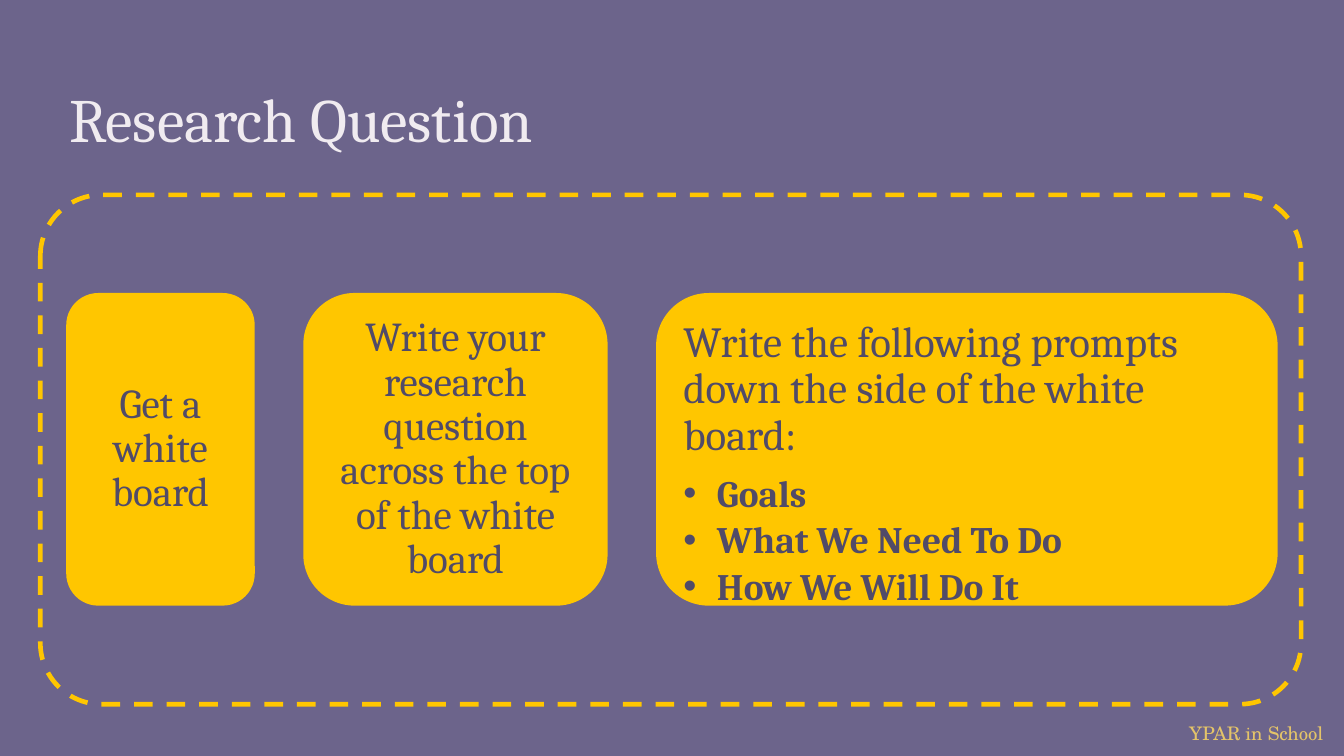
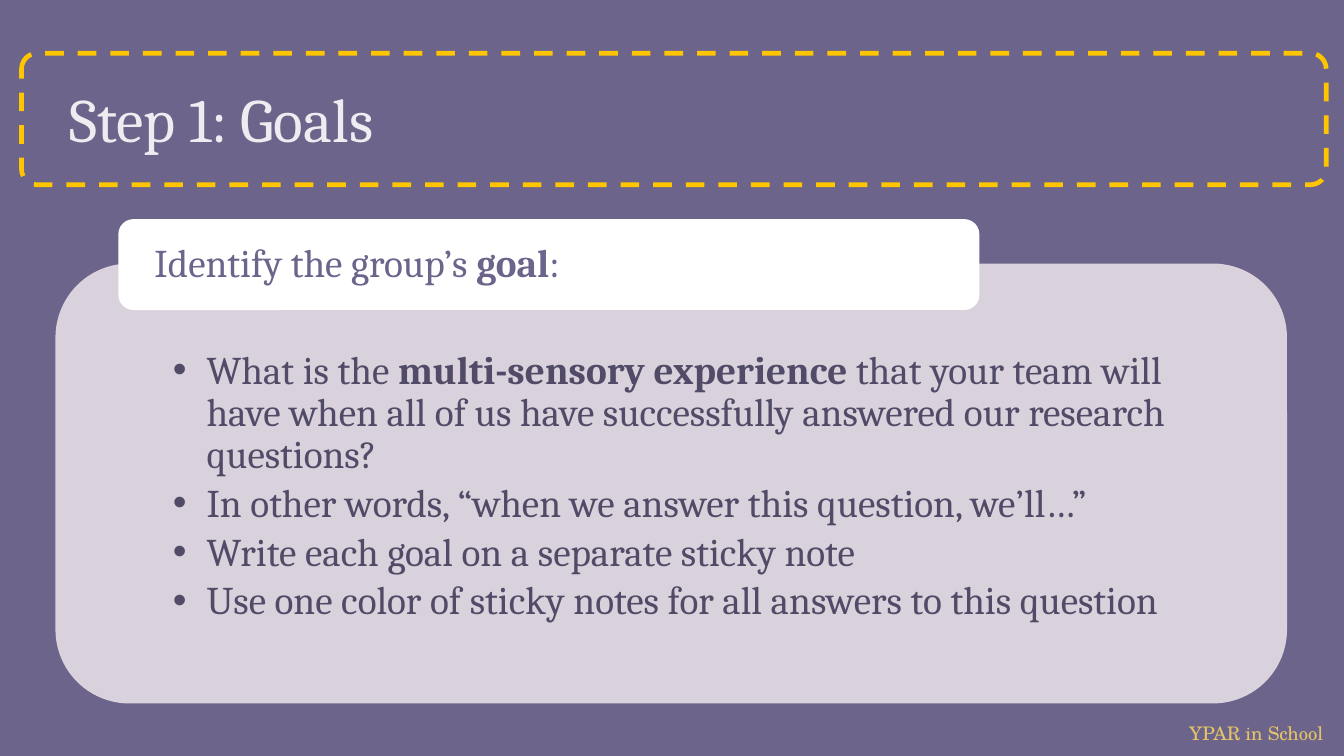
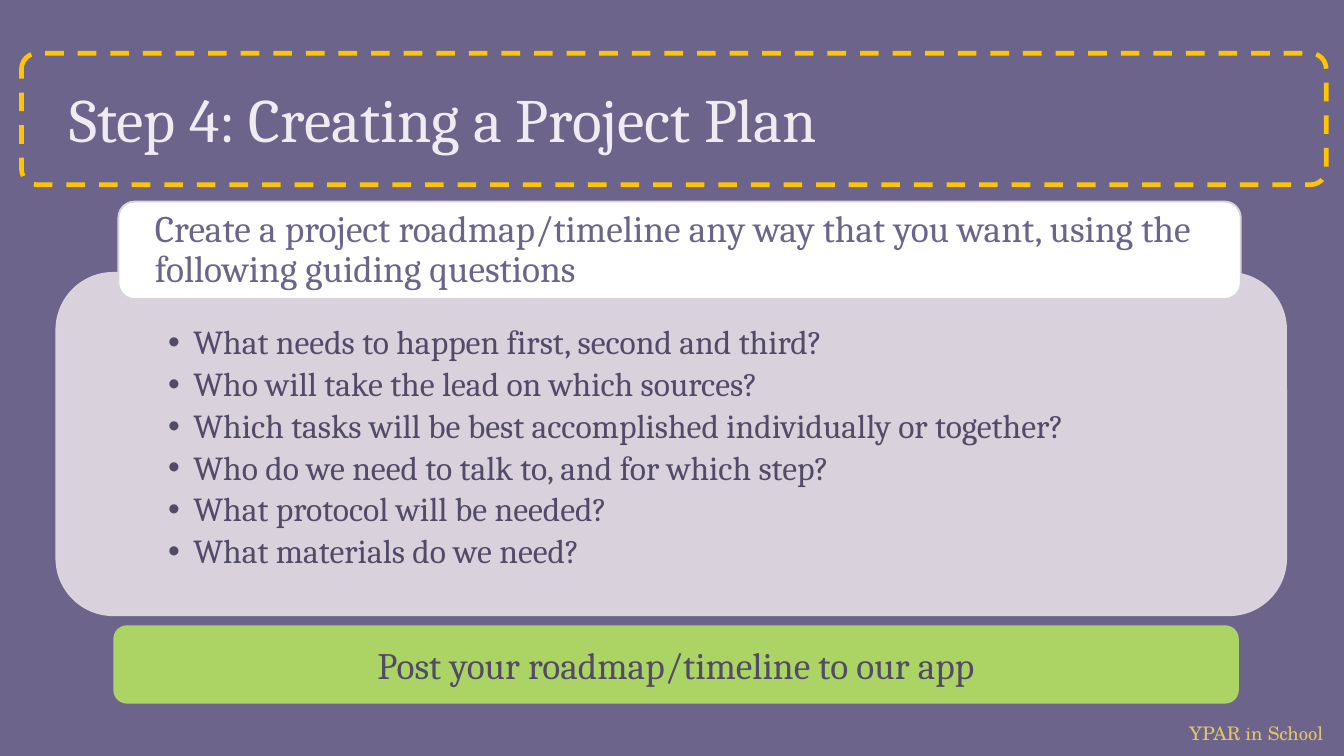
from dataclasses import dataclass

from lxml.etree import SubElement
from pptx import Presentation
from pptx.dml.color import RGBColor
from pptx.enum.dml import MSO_LINE
from pptx.enum.shapes import MSO_SHAPE
from pptx.enum.text import MSO_ANCHOR, PP_ALIGN
from pptx.oxml.ns import qn
from pptx.slide import Slide
from pptx.text.text import TextFrame
from pptx.util import Pt

PURPLE = RGBColor(0x6C, 0x64, 0x8B)
DARK = RGBColor(0x51, 0x4B, 0x68)
PALE = RGBColor(0xF0, 0xEB, 0xF0)
LILAC = RGBColor(0xE5, 0xDF, 0xE5)
LILAC_LINE = RGBColor(0xDA, 0xD3, 0xDD)
YELLOW = RGBColor(0xFF, 0xC6, 0x00)
GOLD = RGBColor(0xE4, 0xC4, 0x69)
GREEN = RGBColor(0xAC, 0xD4, 0x65)
WHITE = RGBColor(0xFF, 0xFF, 0xFF)

BODY_FONT = "Cambria"
FOOTER_FONT = "TeX Gyre Schola"
LINE_SPACING = 0.9
PARAGRAPH_GAP = 0.37
BULLET_GAP = 0.16
BOLD_MARK = "**"


@dataclass(frozen=True)
class Area:
    left: float
    top: float
    width: float
    height: float


@dataclass(frozen=True)
class Line:
    text: str
    size: float
    color: RGBColor = DARK
    indent: float = 0
    font: str = BODY_FONT


@dataclass(frozen=True)
class TextStyle:
    align: PP_ALIGN = PP_ALIGN.LEFT
    anchor: MSO_ANCHOR = MSO_ANCHOR.MIDDLE
    insets: tuple[float, float, float, float] = (7.2, 3.6, 7.2, 3.6)
    spacing: float = LINE_SPACING


@dataclass(frozen=True)
class Box:
    area: Area
    fill: RGBColor | None = None
    line: RGBColor | None = None
    line_width: float = 1
    dashed: bool = False
    corner: float = 0.16667
    opacity: int = 100


@dataclass(frozen=True)
class Card:
    width: float
    lines: list[Line]
    style: TextStyle


TITLE_AREA = Area(30, 36, 659, 54)
TITLE_STYLE = TextStyle(anchor=MSO_ANCHOR.BOTTOM, insets=(7.2,) * 4, spacing=1)
FOOTER_AREA = Area(630, 383, 90, 19.5)
FOOTER_STYLE = TextStyle(anchor=MSO_ANCHOR.TOP, insets=(7.2, 3.6, 0, 3.6), spacing=1)
TAB_STYLE = TextStyle(insets=(17, 0, 17, 0))
CARD_STYLE = TextStyle(align=PP_ALIGN.CENTER, insets=(6.5,) * 4)
PROMPT_STYLE = TextStyle(anchor=MSO_ANCHOR.TOP, insets=(6,) * 4)
BANNER_STYLE = TextStyle(align=PP_ALIGN.CENTER, spacing=1)

STEP_FRAME = Area(11.5, 28.5, 699, 70.5)
CARDS_FRAME = Area(21.6, 104.4, 675.4, 272.9)
CARD_LEFT, CARD_TOP, CARD_HEIGHT, CARD_GAP = 36, 157.5, 166.5, 27


def bullets(texts: list[str], size: float, indent: float) -> list[Line]:
    return [Line(text, size, indent=indent) for text in texts]


def write(tf: TextFrame, lines: list[Line], style: TextStyle) -> None:
    tf.word_wrap = True
    tf.vertical_anchor = style.anchor
    tf.margin_left, tf.margin_top, tf.margin_right, tf.margin_bottom = map(Pt, style.insets)
    for i, line in enumerate(lines):
        p = tf.add_paragraph() if i else tf.paragraphs[0]
        p.alignment = style.align
        p.line_spacing = style.spacing
        if len(lines) > 1:
            gap = BULLET_GAP if line.indent else PARAGRAPH_GAP
            p.space_after = Pt(round(line.size * gap, 1))
        if line.indent:
            pPr = p._p.get_or_add_pPr()
            pPr.set("marL", str(Pt(line.indent)))
            pPr.set("indent", str(-Pt(line.indent)))
            SubElement(pPr, qn("a:buFont"), typeface="Arial")
            SubElement(pPr, qn("a:buChar"), char="•")
        for k, part in enumerate(line.text.split(BOLD_MARK)):
            if part:
                r = p.add_run()
                r.text = part
                r.font.name = line.font
                r.font.size = Pt(line.size)
                r.font.bold = k % 2 == 1
                r.font.color.rgb = line.color


def bounds(area: Area) -> tuple[Pt, Pt, Pt, Pt]:
    return Pt(area.left), Pt(area.top), Pt(area.width), Pt(area.height)


def add_text(s: Slide, area: Area, line: Line, style: TextStyle) -> None:
    write(s.shapes.add_textbox(*bounds(area)).text_frame, [line], style)


def add_box(s: Slide, box: Box, lines: list[Line], style: TextStyle = TextStyle()) -> None:
    sp = s.shapes.add_shape(MSO_SHAPE.ROUNDED_RECTANGLE, *bounds(box.area))
    sp.shadow.inherit = False
    sp.adjustments[0] = box.corner
    if box.fill is None:
        sp.fill.background()
    else:
        sp.fill.solid()
        sp.fill.fore_color.rgb = box.fill
        if box.opacity < 100:
            clr = sp.fill._xPr.find(".//" + qn("a:srgbClr"))
            SubElement(clr, qn("a:alpha"), val=str(box.opacity * 1000))
    if box.line is None:
        sp.line.fill.background()
    else:
        sp.line.color.rgb = box.line
        sp.line.width = Pt(box.line_width)
        if box.dashed:
            sp.line.dash_style = MSO_LINE.DASH
    if lines:
        write(sp.text_frame, lines, style)


def add_frame(s: Slide, area: Area) -> None:
    add_box(s, Box(area, line=YELLOW, line_width=2.5, dashed=True, corner=0.12), [])


def add_panel(s: Slide, top: float, height: float, lines: list[Line], inset_top: float) -> None:
    box = Box(Area(30.2, top, 658.8, height), LILAC, LILAC_LINE, opacity=90)
    style = TextStyle(anchor=MSO_ANCHOR.TOP, insets=(51, inset_top, 51, 10))
    add_box(s, box, lines, style)


def new_slide(prs: Presentation, title: str) -> Slide:
    s = prs.slides.add_slide(prs.slide_layouts[6])
    s.background.fill.solid()
    s.background.fill.fore_color.rgb = PURPLE
    add_text(s, FOOTER_AREA, Line("YPAR in School", 10, GOLD, font=FOOTER_FONT), FOOTER_STYLE)
    add_text(s, TITLE_AREA, Line(title, 33, PALE), TITLE_STYLE)
    return s


def research_question(prs: Presentation) -> None:
    s = new_slide(prs, "Research Question")
    prompts = ["**Goals**", "**What We Need To Do**", "**How We Will Do It**"]
    intro = Line("Write the following prompts down the side of the white board:", 23)
    question = Line("Write your research question across the top of the white board", 22)
    cards = [
        Card(100, [Line("Get a white board", 22)], CARD_STYLE),
        Card(162, [question], CARD_STYLE),
        Card(332, [intro, *bullets(prompts, 20, 18)], PROMPT_STYLE),
    ]
    left = CARD_LEFT
    for card in cards:
        area = Area(left, CARD_TOP, card.width, CARD_HEIGHT)
        add_box(s, Box(area, YELLOW, YELLOW), card.lines, card.style)
        left += card.width + CARD_GAP
    add_frame(s, CARDS_FRAME)


def goals(prs: Presentation) -> None:
    s = new_slide(prs, "Step 1: Goals")
    questions = [
        "What is the **multi-sensory experience **that your team will have when all of us "
        "have successfully answered our research questions?",
        "In other words, “when we answer this question, we’ll…”",
        "Write each goal on a separate sticky note",
        "Use one color of sticky notes for all answers to this question",
    ]
    add_panel(s, 141.7, 234.7, bullets(questions, 21, 18), 34.5)
    heading = Line("Identify the group’s **goal**:", 21, PURPLE)
    add_box(s, Box(Area(63.4, 117.4, 461.3, 48.7), WHITE), [heading], TAB_STYLE)
    add_frame(s, STEP_FRAME)


def project_plan(prs: Presentation) -> None:
    s = new_slide(prs, "Step 4: Creating a Project Plan")
    questions = [
        "What needs to happen first, second and third?",
        "Who will take the lead on which sources?",
        "Which tasks will be best accomplished individually or together?",
        "Who do we need to talk to, and for which step?",
        "What protocol will be needed?",
        "What materials do we need?",
    ]
    add_panel(s, 146.2, 183.4, bullets(questions, 18, 13.5), 19.5)
    heading = Line(
        "Create a project roadmap/timeline any way that you want, "
        "using the following guiding questions", 20, PURPLE)
    add_box(s, Box(Area(63.4, 108, 601.3, 52.2), WHITE, LILAC_LINE), [heading], TAB_STYLE)
    add_frame(s, STEP_FRAME)
    banner = Line("Post your roadmap/timeline to our app", 20)
    add_box(s, Box(Area(61.2, 335.5, 602, 41), GREEN, GREEN), [banner], BANNER_STYLE)


def main() -> None:
    prs = Presentation()
    prs.slide_width, prs.slide_height = Pt(720), Pt(405)
    research_question(prs)
    goals(prs)
    project_plan(prs)
    prs.save("out.pptx")


if __name__ == "__main__":
    main()
